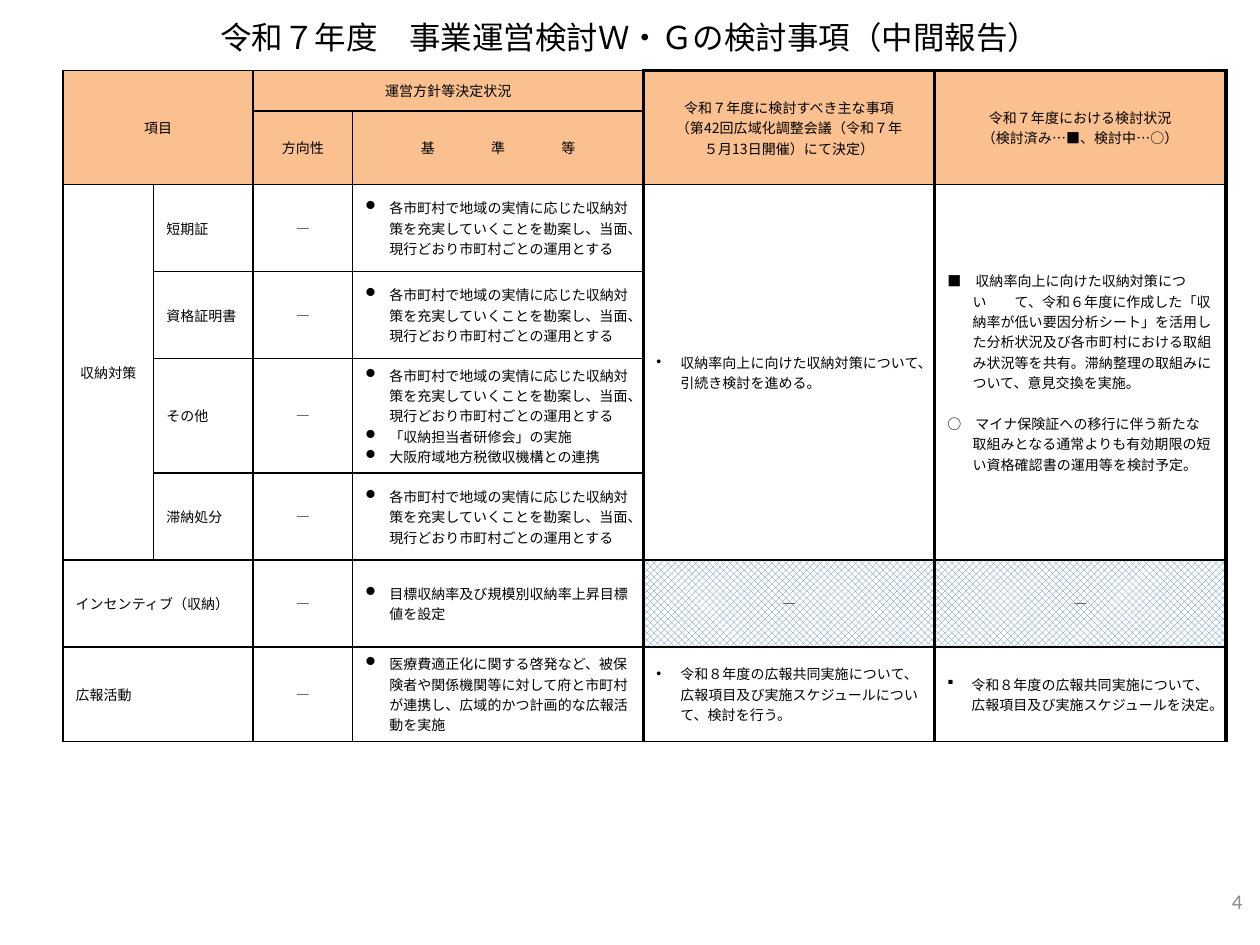
from lxml.etree import SubElement
from pptx import Presentation
from pptx.dml.color import RGBColor
from pptx.enum.dml import MSO_PATTERN
from pptx.enum.text import MSO_ANCHOR, PP_ALIGN
from pptx.oxml import parse_xml
from pptx.oxml.ns import nsdecls, qn
from pptx.util import Inches, Pt

BLACK = RGBColor(0, 0, 0)
WHITE = RGBColor(255, 255, 255)
GRAY = RGBColor(0x8C, 0x8C, 0x8C)
ORANGE = RGBColor(0xFA, 0xC0, 0x90)
BLUE = RGBColor(0x4F, 0x81, 0xBD)
JAPANESE = "Noto Sans CJK JP"
LATIN = "Calibri"

TITLE = "令和７年度　事業運営検討Ｗ・Ｇの検討事項（中間報告）"
PAGE_NUMBER = "4"
COLUMN_WIDTHS = (0.72, 0.79, 0.79, 2.31, 2.31, 2.31)
ROW_HEIGHTS = (0.32, 0.58, 0.69, 0.69, 0.91, 0.69, 0.69, 0.75)
FIRST_REVIEW_COLUMN = 4  # the last two columns stand in a heavy frame
THIN, HEAVY = 1, 2.25

# Bullet name: (font, character)
BULLETS = {"disc": ("Wingdings", "l"), "square": ("Wingdings", "§"), "dot": ("Arial", "•")}

DASH = "―"
AS_IS = "各市町村で地域の実情に応じた収納対策を充実していくことを勘案し、当面、現行どおり市町村ごとの運用とする"
CENTER = {"align": PP_ALIGN.CENTER}
DISC = {"bullet": "disc", "indent": 0.19}
DOT = {"bullet": "dot", "indent": 0.19}
SQUARE = {"bullet": "square", "indent": 0.19}
HANGING = {"indent": 0.2, "gap": 11.6}

# (row, column, rows spanned, columns spanned, paragraphs, format)
HEADERS = [
    (0, 0, 2, 2, ["項目"], CENTER),
    (0, 2, 1, 2, ["運営方針等決定状況"], CENTER),
    (0, 4, 2, 1, ["令和７年度に検討すべき主な事項", "（第42回広域化調整会議（令和７年",
                  "５月13日開催）にて決定）"], CENTER),
    (0, 5, 2, 1, ["令和７年度における検討状況", "（検討済み…■、検討中…○）"], CENTER),
    (1, 2, 1, 1, ["方向性"], CENTER),
    (1, 3, 1, 1, ["基　　　　準　　　　等"], CENTER),
]
MEASURES = [
    ("短期証", [AS_IS]),
    ("資格証明書", [AS_IS]),
    ("その他", [AS_IS, "「収納担当者研修会」の実施", "大阪府域地方税徴収機構との連携"]),
    ("滞納処分", [AS_IS]),
]
OTHER_ITEMS = [
    ("インセンティブ（収納）", ["目標収納率及び規模別収納率上昇目標値を設定"]),
    ("広報活動", ["医療費適正化に関する啓発など、被保険者や関係機関等に対して府と市町村が連携し、"
                  "広域的かつ計画的な広報活動を実施"]),
]
REVIEWS = [
    (2, 4, 4, 1, ["収納率向上に向けた収納対策について、引続き検討を進める。"], DOT),
    (2, 5, 4, 1, [
        "■　収納率向上に向けた収納対策につい　　て、令和６年度に作成した「収納率が低い要因分析シート」"
        "を活用した分析状況及び各市町村における取組み状況等を共有。滞納整理の取組みについて、意見交換を実施。",
        "○　マイナ保険証への移行に伴う新たな取組みとなる通常よりも有効期限の短い資格確認書の運用等を検討予定。",
    ], HANGING),
    (6, 4, 1, 1, [DASH], CENTER),
    (6, 5, 1, 1, [DASH], CENTER),
    (7, 4, 1, 1, ["令和８年度の広報共同実施について、広報項目及び実施スケジュールについて、検討を行う。"], DOT),
    (7, 5, 1, 1, ["令和８年度の広報共同実施について、広報項目及び実施スケジュールを決定。"], SQUARE),
]


def write(frame, lines, size=8, font=JAPANESE, color=BLACK, align=PP_ALIGN.LEFT,
          bullet=None, indent=0, gap=0):
    """Write one paragraph per line; gap is the space in points between them."""
    frame.word_wrap = True
    for index, text in enumerate(lines):
        para = frame.paragraphs[0] if index == 0 else frame.add_paragraph()
        para.alignment = align
        if index and gap:
            para.space_before = Pt(gap)
        span = para.add_run()
        span.text = text
        span.font.size = Pt(size)
        span.font.name = font
        span.font.color.rgb = color
        SubElement(span._r.get_or_add_rPr(), qn("a:ea")).set("typeface", font)
        properties = para._p.get_or_add_pPr()
        if indent:
            properties.set("marL", str(Inches(indent)))
            properties.set("indent", str(-Inches(indent)))
        if bullet:
            bullet_font, character = BULLETS[bullet]
            SubElement(properties, qn("a:buFont")).set("typeface", bullet_font)
            SubElement(properties, qn("a:buChar")).set("char", character)


def add_text(page, text, left, top, width, height, **style):
    box = page.shapes.add_textbox(Inches(left), Inches(top), Inches(width), Inches(height))
    box.text_frame.vertical_anchor = MSO_ANCHOR.MIDDLE
    write(box.text_frame, [text], **style)


def set_borders(cell, row, column):
    review = column >= FIRST_REVIEW_COLUMN
    heavy = {"L": review, "R": column >= FIRST_REVIEW_COLUMN - 1,
             "T": review and row == 0, "B": False}
    properties = cell._tc.get_or_add_tcPr()
    for position, (side, is_heavy) in enumerate(heavy.items()):
        width = Pt(HEAVY if is_heavy else THIN)
        properties.insert(position, parse_xml(
            f'<a:ln{side} {nsdecls("a")} w="{width}"><a:solidFill>'
            f'<a:srgbClr val="{BLACK}"/></a:solidFill></a:ln{side}>'))


def set_fill(cell, row, column):
    fill = cell.fill
    if row < 2:
        fill.solid()
        fill.fore_color.rgb = ORANGE
    elif row == 6 and column >= FIRST_REVIEW_COLUMN:
        fill.patterned()
        fill.pattern = MSO_PATTERN.from_xml("openDmnd")
        fill.fore_color.rgb = BLUE
        fill.back_color.rgb = WHITE
    else:
        fill.background()


def list_entries():
    entries = HEADERS + REVIEWS + [(2, 0, len(MEASURES), 1, ["収納対策"], CENTER)]
    for row, (label, standards) in enumerate(MEASURES + OTHER_ITEMS, start=2):
        if row < 2 + len(MEASURES):
            entries.append((row, 1, 1, 1, [label], {}))
        else:
            entries.append((row, 0, 1, 2, [label], {}))
        entries.append((row, 2, 1, 1, [DASH], CENTER))
        entries.append((row, 3, 1, 1, standards, DISC))
    return entries


def add_review_table(page):
    table = page.shapes.add_table(
        len(ROW_HEIGHTS), len(COLUMN_WIDTHS), Inches(0.5), Inches(0.56),
        Inches(sum(COLUMN_WIDTHS)), Inches(sum(ROW_HEIGHTS))).table
    table.first_row = table.horz_banding = False
    for column, width in zip(table.columns, COLUMN_WIDTHS):
        column.width = Inches(width)
    for row, height in zip(table.rows, ROW_HEIGHTS):
        row.height = Inches(height)
    for row in range(len(ROW_HEIGHTS)):
        for column in range(len(COLUMN_WIDTHS)):
            cell = table.cell(row, column)
            set_fill(cell, row, column)
            set_borders(cell, row, column)
    for row, column, row_span, column_span, lines, style in list_entries():
        cell = table.cell(row, column)
        if row_span * column_span > 1:
            cell.merge(table.cell(row + row_span - 1, column + column_span - 1))
        cell.vertical_anchor = MSO_ANCHOR.MIDDLE
        write(cell.text_frame, lines, **style)


def main():
    deck = Presentation()
    deck.slide_width, deck.slide_height = Inches(10), Inches(7.5)
    page = deck.slides.add_slide(deck.slide_layouts[6])
    add_review_table(page)
    add_text(page, TITLE, 0.5, 0.02, 9, 0.54, size=18, align=PP_ALIGN.CENTER)
    add_text(page, PAGE_NUMBER, 7.63, 6.95, 2.33, 0.4,
             size=12, font=LATIN, color=GRAY, align=PP_ALIGN.RIGHT)
    deck.save("out.pptx")


if __name__ == "__main__":
    main()
